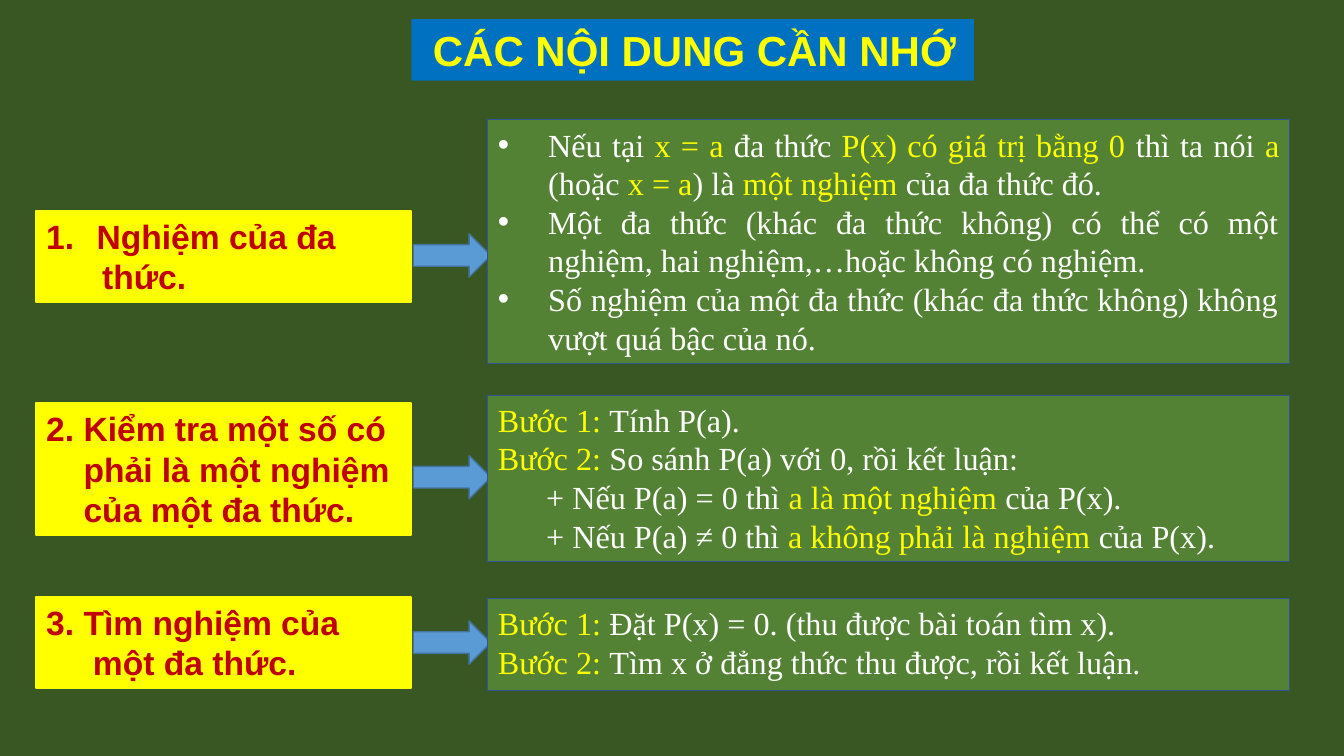
from lxml import etree
from pptx import Presentation
from pptx.dml.color import RGBColor
from pptx.enum import shapes, text
from pptx.oxml import ns
from pptx.util import Pt

BACK = RGBColor(0x38, 0x57, 0x23)
GREEN = RGBColor(0x54, 0x82, 0x35)
NAVY = RGBColor(0x2F, 0x55, 0x97)
BLUE = RGBColor(0x00, 0x70, 0xC0)
SKY = RGBColor(0x5B, 0x9B, 0xD5)
STEEL = RGBColor(0x43, 0x73, 0x9E)
YELLOW = RGBColor(0xFF, 0xFF, 0x00)
WHITE = RGBColor(0xFF, 0xFF, 0xFF)
RED = RGBColor(0xC0, 0x00, 0x00)

HEAD = {"name": "Arial", "size": Pt(30), "bold": True}
LABEL = {"name": "Arial", "size": Pt(24), "bold": True}
BODY = {"name": "Times New Roman", "size": Pt(23), "bold": False}
RECT = shapes.MSO_SHAPE.RECTANGLE
ARROW = shapes.MSO_SHAPE.RIGHT_ARROW
LEFT, JUST = text.PP_ALIGN.LEFT, text.PP_ALIGN.JUSTIFY

LABEL_X, LABEL_W = 25.9, 267.9
ARROW_X, ARROW_W, ARROW_H = 295.2, 55.4, 31
PANEL_X, PANEL_W = 348.5, 572.4

# Each line is (left indent, bullet or number, text); "|" switches the highlight.
ROWS = [
    {"label": (150.5, 65.5), "arrow": 167, "panel": (85.7, 174.2), "align": JUST,
     "name": [(36, "1.", "Nghiệm của đa"), (40, "", "thức.")],
     "lines": [
         (36, "•", "Nếu tại |x = a |đa thức |P(x) có giá trị bằng 0 |thì ta nói |a"
                   "| (hoặc |x = a|) là |một nghiệm |của đa thức đó."),
         (36, "•", "Một đa thức (khác đa thức không) có thể có một nghiệm, "
                   "hai nghiệm,…hoặc không có nghiệm."),
         (36, "•", "Số nghiệm của một đa thức (khác đa thức không) "
                   "không vượt quá bậc của nó.")]},
    {"label": (288, 94.3), "arrow": 325.4, "panel": (282.2, 118.8), "align": LEFT,
     "name": [(0, "", "2. Kiểm tra một số có"), (26.7, "", "phải là một nghiệm"),
              (26.7, "", "của một đa thức.")],
     "lines": [
         (0, "", "|Bước 1: |Tính P(a)."),
         (0, "", "|Bước 2: |So sánh P(a) với 0, rồi kết luận:"),
         (34.5, "", "+ Nếu P(a) = 0 thì |a là một nghiệm |của P(x)."),
         (34.5, "", "+ Nếu P(a) ≠ 0 thì |a không phải là nghiệm |của P(x).")]},
    {"label": (426.2, 65.5), "arrow": 443.5, "panel": (427.7, 65.5), "align": LEFT,
     "name": [(0, "", "3. Tìm nghiệm của"), (33.4, "", "một đa thức.")],
     "lines": [
         (0, "", "|Bước 1: |Đặt P(x) = 0. (thu được bài toán tìm x)."),
         (0, "", "|Bước 2: |Tìm x ở đẳng thức thu được, rồi kết luận.")]},
]


def block(slide, kind, box, fill, line=None, width=0):
    """Draw a filled shape in the box, with an outline if a line colour is given."""
    shape = slide.shapes.add_shape(kind, *(Pt(n) for n in box))
    shape.shadow.inherit = False
    shape.fill.solid()
    shape.fill.fore_color.rgb = fill
    if line is None:
        shape.line.fill.background()
    else:
        shape.line.color.rgb = line
        shape.line.width = Pt(width)
    return shape


def mark(para, left, sign):
    """Set the left indent and hang a bullet or number in it."""
    props = para._p.get_or_add_pPr()
    props.set("marL", str(Pt(left)))
    props.set("indent", str(Pt(-left if sign else 0)))
    if sign == "•":
        font = etree.SubElement(props, ns.qn("a:buFont"))
        font.set("typeface", "Arial")
        etree.SubElement(props, ns.qn("a:buChar")).set("char", sign)
    elif sign:
        font = etree.SubElement(props, ns.qn("a:buFont"))
        font.set("typeface", "+mj-lt")
        etree.SubElement(props, ns.qn("a:buAutoNum")).set("type", "arabicPeriod")


def write(shape, lines, form, inks, align=LEFT):
    """Fill the shape with lines whose parts take the two inks in turn."""
    frame = shape.text_frame
    frame.word_wrap = True
    frame.vertical_anchor = text.MSO_ANCHOR.TOP
    for i, (left, sign, words) in enumerate(lines):
        para = frame.add_paragraph() if i else frame.paragraphs[0]
        para.alignment = align
        mark(para, left, sign)
        for j, part in enumerate(words.split("|")):
            if part:
                run = para.add_run()
                run.text = part
                for key, value in form.items():
                    setattr(run.font, key, value)
                run.font.color.rgb = inks[j % 2]


def title(slide, box):
    """Place the heading banner in the box."""
    banner = block(slide, RECT, box, BLUE)
    write(banner, [(8.3, "", "CÁC NỘI DUNG CẦN NHỚ")], HEAD, (YELLOW, YELLOW))


def topic(slide, row):
    """Place one topic: its label, its arrow and its panel."""
    top, high = row["label"]
    label = block(slide, RECT, (LABEL_X, top, LABEL_W, high), YELLOW, YELLOW, 1.5)
    write(label, row["name"], LABEL, (RED, RED), JUST)
    block(slide, ARROW, (ARROW_X, row["arrow"], ARROW_W, ARROW_H), SKY, STEEL, 1)
    top, high = row["panel"]
    panel = block(slide, RECT, (PANEL_X, top, PANEL_W, high), GREEN, NAVY, 0.75)
    write(panel, row["lines"], BODY, (WHITE, YELLOW), row["align"])


def main():
    """Build the slide and save it."""
    deck = Presentation()
    deck.slide_width, deck.slide_height = Pt(960), Pt(540)
    slide = deck.slides.add_slide(deck.slide_layouts[6])
    slide.background.fill.solid()
    slide.background.fill.fore_color.rgb = BACK
    title(slide, (293.8, 13.7, 401.8, 43.9))
    for row in ROWS:
        topic(slide, row)
    deck.save("out.pptx")


if __name__ == "__main__":
    main()
